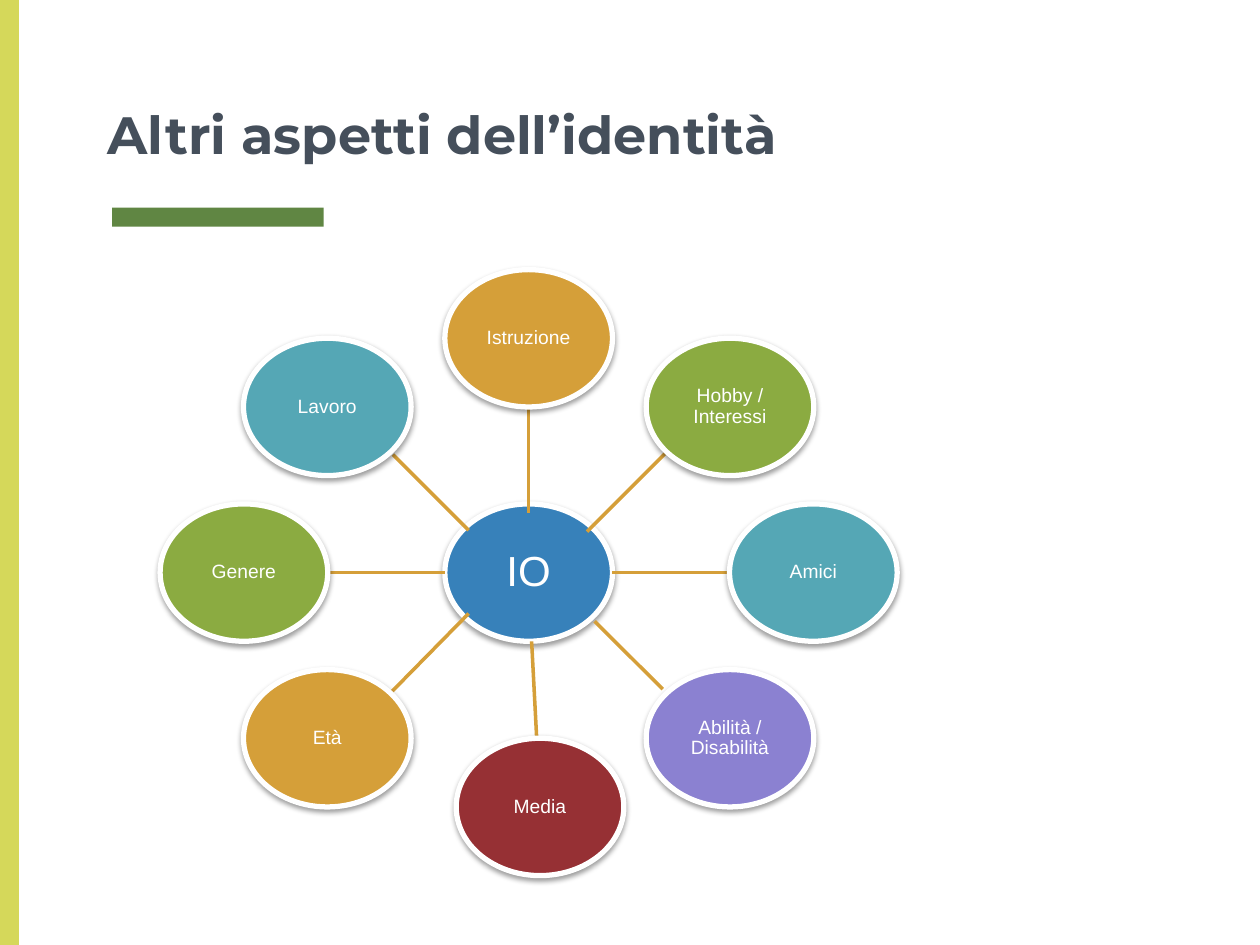
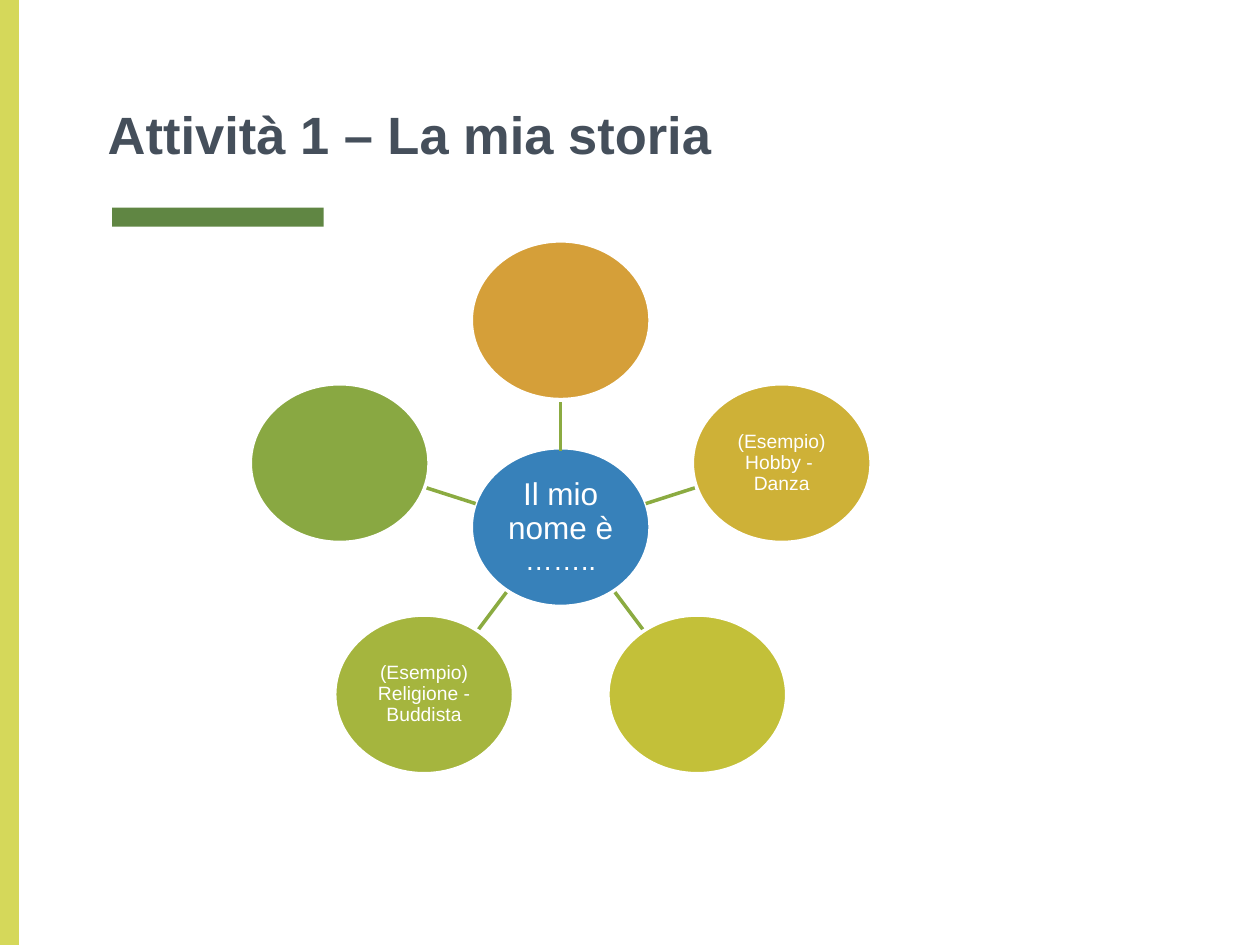
from math import cos, radians, sin

from lxml.etree import SubElement
from pptx import Presentation
from pptx.dml.color import RGBColor
from pptx.enum.shapes import MSO_CONNECTOR, MSO_SHAPE
from pptx.enum.text import MSO_ANCHOR, PP_ALIGN
from pptx.oxml.ns import qn
from pptx.util import Pt

WHITE = RGBColor(0xFF, 0xFF, 0xFF)
SLATE = RGBColor(0x45, 0x4F, 0x5B)
DARK_GREEN = RGBColor(0x60, 0x86, 0x43)
LIME = RGBColor(0xD5, 0xD8, 0x5A)
BLUE = RGBColor(0x37, 0x81, 0xBA)
ORANGE = RGBColor(0xD5, 0x9F, 0x39)
GREEN = RGBColor(0x8B, 0xAB, 0x41)
TEAL = RGBColor(0x55, 0xA7, 0xB5)
PURPLE = RGBColor(0x8B, 0x81, 0xD1)
RED = RGBColor(0x96, 0x30, 0x34)
GOLD = RGBColor(0xCE, 0xB1, 0x37)
YELLOW = RGBColor(0xC3, 0xC0, 0x39)
OLIVE = RGBColor(0xA5, 0xB5, 0x3E)
LEAF = RGBColor(0x89, 0xA8, 0x42)

# Each satellite: paragraphs, fill, spoke (x1, y1, x2, y2), sideways shift.
# Satellites run clockwise from the top.
WHEELS = [
    {
        "title": "Altri aspetti dell’identità", "font": "Montserrat",
        "centre": (302.1, 327.2), "radii": (162.7, 133.9), "size": (95.8, 78.5),
        "outline": 3, "shadow": True, "spoke": ORANGE,
        "hub": [("IO", 24)],
        "satellites": [
            (["Istruzione"], ORANGE, (302.1, 293, 302.1, 232.6), 0),
            (["Hobby / Interessi"], GREEN, (335.5, 303.8, 383, 256.3), 0),
            (["Amici"], TEAL, (349.9, 327.2, 416.9, 327.2), 0),
            (["Abilità / Disabilità"], PURPLE, (339.8, 355, 378.7, 393.8), 0),
            (["Media"], RED, (303.8, 366.5, 306.7, 421.9), 6.5),
            (["Età"], ORANGE, (267.8, 350.6, 221, 398.2), 0),
            (["Genere"], GREEN, (254.2, 327.2, 187.2, 327.2), 0),
            (["Lavoro"], TEAL, (267.8, 303, 224.6, 259.8), 0),
        ],
    },
    {
        "title": "Attività 1 – La mia storia", "font": "Arial",
        "centre": (320.4, 301.2), "radii": (132.8, 118.2), "size": (102.2, 90.7),
        "outline": 2, "shadow": False, "spoke": GREEN,
        "hub": [("Il mio nome è ", 18), ("……..", 16)],
        "satellites": [
            ([], ORANGE, (320.4, 257.5, 320.4, 229.5), 0),
            (["(Esempio) Hobby - ", "Danza"], GOLD, (369, 287.8, 398, 278.5), 0),
            ([], YELLOW, (351.4, 338.4, 367.6, 360), 0),
            (["(Esempio) Religione - Buddista"], OLIVE, (289.4, 338.4, 273.2, 360), 0),
            ([], LEAF, (271.8, 287.8, 242.8, 278.5), 0),
        ],
    },
]


def add_disc(page, wheel, x, y, fill, paragraphs):
    """Draw one ellipse centred on x, y; paragraphs hold (text, size) runs."""
    width, height = wheel["size"]
    disc = page.shapes.add_shape(MSO_SHAPE.OVAL, Pt(x - width / 2), Pt(y - height / 2),
                                 Pt(width), Pt(height))
    disc.fill.solid()
    disc.fill.fore_color.rgb = fill
    disc.line.color.rgb = WHITE
    disc.line.width = Pt(wheel["outline"])
    disc.shadow.inherit = False
    if wheel["shadow"]:
        effects = disc._element.spPr.find(qn("a:effectLst"))
        shadow = SubElement(effects, qn("a:outerShdw"), blurRad=str(Pt(3.1)),
                            dist=str(Pt(1.6)), dir="5400000", rotWithShape="0")
        shade = SubElement(shadow, qn("a:srgbClr"), val="000000")
        SubElement(shade, qn("a:alpha"), val="38000")
    frame = disc.text_frame
    frame.word_wrap = True
    frame.vertical_anchor = MSO_ANCHOR.MIDDLE
    frame.margin_left = frame.margin_right = frame.margin_top = frame.margin_bottom = 0
    for index, runs in enumerate(paragraphs):
        para = frame.add_paragraph() if index else frame.paragraphs[0]
        para.alignment = PP_ALIGN.CENTER
        para.line_spacing = 0.9
        for text, size in runs:
            span = para.add_run()
            span.text = text
            span.font.name = "Arial"
            span.font.size = Pt(size)
            span.font.color.rgb = WHITE


def add_frame(page, title, font):
    """Add the two bands and the title that every slide has."""
    for left, top, width, height, color in [(64, 118.7, 121, 10.8, DARK_GREEN),
                                            (0, 0, 10.8, 540, LIME)]:
        band = page.shapes.add_shape(MSO_SHAPE.RECTANGLE, Pt(left), Pt(top),
                                     Pt(width), Pt(height))
        band.fill.solid()
        band.fill.fore_color.rgb = color
        band.line.fill.background()
        band.shadow.inherit = False
    box = page.shapes.add_textbox(Pt(54.5), Pt(0), Pt(611.5), Pt(101.5))
    frame = box.text_frame
    frame.word_wrap = True
    frame.vertical_anchor = MSO_ANCHOR.BOTTOM
    frame.margin_left = frame.margin_right = frame.margin_top = frame.margin_bottom = Pt(7.2)
    span = frame.paragraphs[0].add_run()
    span.text = title
    span.font.name = font
    span.font.size = Pt(30)
    span.font.bold = True
    span.font.color.rgb = SLATE


deck = Presentation()
deck.slide_width, deck.slide_height = Pt(720), Pt(540)

for wheel in WHEELS:
    page = deck.slides.add_slide(deck.slide_layouts[6])
    add_frame(page, wheel["title"], wheel["font"])
    centre_x, centre_y = wheel["centre"]
    radius_x, radius_y = wheel["radii"]
    add_disc(page, wheel, centre_x, centre_y, BLUE, [wheel["hub"]])

    step = 360 / len(wheel["satellites"])
    for index, (lines, fill, ends, shift) in enumerate(wheel["satellites"]):
        spoke = page.shapes.add_connector(MSO_CONNECTOR.STRAIGHT, *[Pt(end) for end in ends])
        spoke.line.color.rgb = wheel["spoke"]
        spoke.line.width = Pt(2)
        SubElement(spoke._element.spPr, qn("a:effectLst"))
        angle = radians(index * step)
        add_disc(page, wheel, centre_x + radius_x * sin(angle) + shift,
                 centre_y - radius_y * cos(angle), fill, [[(line, 11)] for line in lines])

deck.save("out.pptx")
